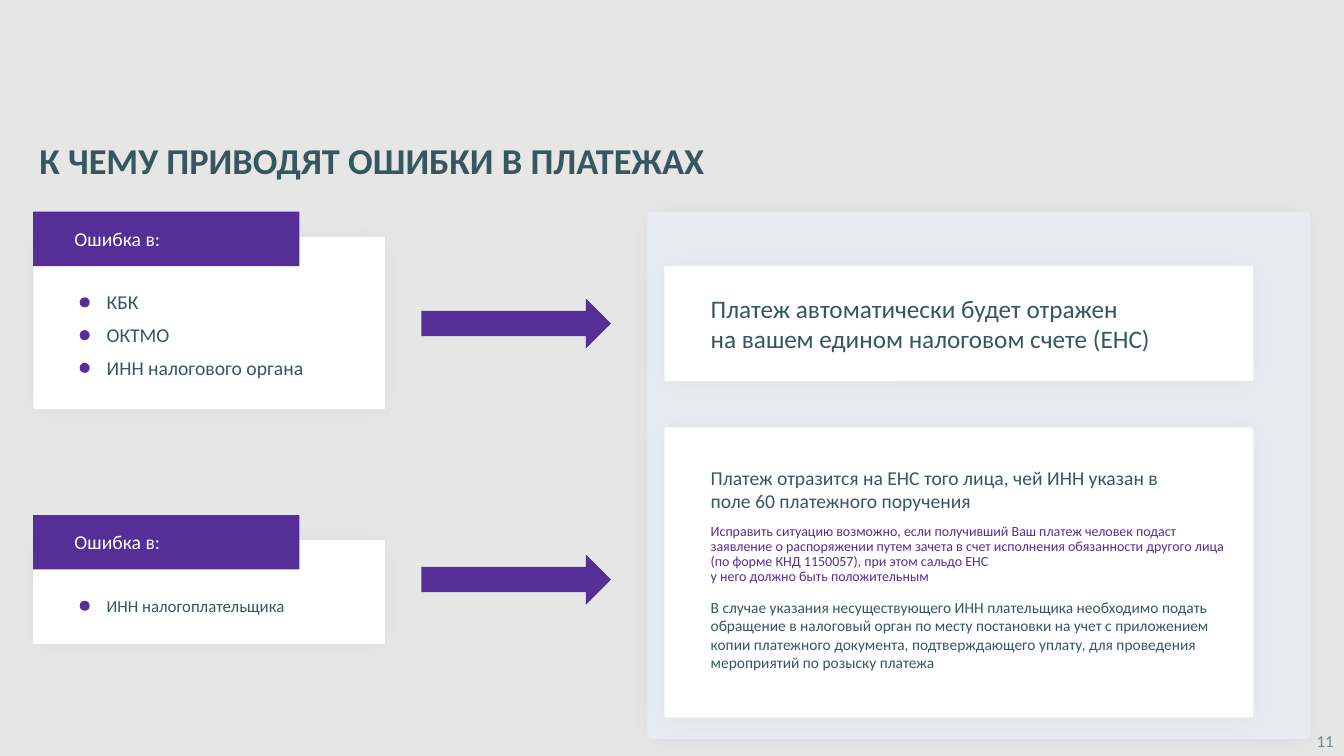
from copy import deepcopy
from dataclasses import dataclass

from lxml.etree import SubElement
from pptx import Presentation
from pptx.dml.color import RGBColor
from pptx.enum.shapes import MSO_SHAPE as Preset
from pptx.enum.text import MSO_ANCHOR as Anchor, MSO_AUTO_SIZE as AutoSize, PP_ALIGN as Align
from pptx.oxml.ns import qn
from pptx.shapes.autoshape import Shape
from pptx.slide import Slide
from pptx.util import Inches, Pt


@dataclass(frozen=True)
class Theme:
    font: str = "Calibri"
    background: str = "E7E6E6"
    panel: str = "E8EBF2"
    card: str = "FFFFFF"
    accent: str = "562E98"
    ink: str = "365760"
    title: int = 26
    lead: int = 18
    body: int = 14
    small: int = 12
    note: int = 11
    hint: int = 10


THEME = Theme()


@dataclass(frozen=True)
class Box:
    left: float
    top: float
    width: float
    height: float

    def emu(self) -> tuple:
        return tuple(Inches(v) for v in (self.left, self.top, self.width, self.height))


@dataclass(frozen=True)
class ErrorCause:
    top: float
    card_height: float
    items: tuple[str, ...]
    items_top: float
    item_height: float
    size: int
    arrow_top: float


@dataclass(frozen=True)
class Passage:
    box: Box
    text: str
    size: int
    color: str = THEME.ink
    spacing: float = 1.0


CAUSES = (
    ErrorCause(2.1, 1.71, ("КБК", "ОКТМО", "ИНН налогового органа"), 2.83, 0.34, THEME.body, 2.96),
    ErrorCause(5.11, 1.03, ("ИНН налогоплательщика",), 5.86, 0.3, THEME.small, 5.5),
)
OUTCOME_CARDS = (Box(6.59, 2.64, 5.84, 1.14), Box(6.59, 4.24, 5.84, 2.88))
PASSAGES = (
    Passage(Box(6.95, 2.86, 5.4, 0.71),
            "Платеж автоматически будет отражен\nна вашем едином налоговом счете (ЕНС)", THEME.lead),
    Passage(Box(6.95, 4.57, 4.98, 0.57),
            "Платеж отразится на ЕНС того лица, чей ИНН указан в поле 60 платежного поручения",
            THEME.body),
    Passage(Box(6.95, 5.15, 5.38, 0.71),
            "Исправить ситуацию возможно, если получивший Ваш платеж человек подаст заявление "
            "о распоряжении путем зачета в счет исполнения обязанности другого лица "
            "(по форме КНД 1150057), при этом сальдо ЕНС \nу него должно быть положительным",
            THEME.hint, THEME.accent, 0.9),
    Passage(Box(6.95, 5.88, 5.38, 1.03),
            "В случае указания несуществующего ИНН плательщика необходимо подать обращение "
            "в налоговый орган по месту постановки на учет с приложением копии платежного "
            "документа, подтверждающего уплату, для проведения мероприятий по розыску платежа",
            THEME.note),
)
ITEM_STEP = 0.325
DOT = 0.1


def write(shape: Shape, text: str, *, size: int, color: str = THEME.ink, bold: bool = False,
          wrap: bool = True, spacing: float = 1.0, alpha: int = 100) -> None:
    frame = shape.text_frame
    frame.word_wrap = wrap
    frame.auto_size = AutoSize.NONE
    frame.vertical_anchor = Anchor.TOP
    paragraph = frame.paragraphs[0]
    paragraph.text = text
    paragraph.alignment = Align.LEFT
    paragraph.line_spacing = spacing
    for run in paragraph.runs:
        run.font.name = THEME.font
        run.font.size = Pt(size)
        run.font.bold = bold
        run.font.color.rgb = RGBColor.from_string(color)
    properties = paragraph.runs[0].font._element
    if alpha < 100:
        SubElement(properties.find(".//" + qn("a:srgbClr")), qn("a:alpha"), val=str(alpha * 1000))
    # Line breaks take the same size as the words around them
    for line_break in paragraph._p.findall(qn("a:br")):
        line_break.insert(0, deepcopy(properties))


def add_text(slide: Slide, box: Box, text: str, **style) -> None:
    write(slide.shapes.add_textbox(*box.emu()), text, **style)


def add_block(slide: Slide, preset: Preset, box: Box, color: str) -> Shape:
    block = slide.shapes.add_shape(preset, *box.emu())
    block.shadow.inherit = False
    block.fill.solid()
    block.fill.fore_color.rgb = RGBColor.from_string(color)
    block.line.fill.background()
    return block


def add_card(slide: Slide, box: Box, color: str = THEME.card) -> None:
    card = add_block(slide, Preset.ROUNDED_RECTANGLE, box, color)
    card.adjustments[0] = 0.009
    effects = card._element.spPr.find(qn("a:effectLst"))
    shadow = SubElement(effects, qn("a:outerShdw"), blurRad=str(Pt(20)), dist=str(Pt(1)),
                        dir="6000000", algn="ctr", rotWithShape="0")
    black = SubElement(shadow, qn("a:srgbClr"), val="000000")
    SubElement(black, qn("a:alpha"), val="4000")


def add_cause(slide: Slide, cause: ErrorCause) -> None:
    # Card with its header strip
    add_card(slide, Box(0.33, cause.top + 0.25, 3.49, cause.card_height))
    add_block(slide, Preset.RECTANGLE, Box(0.33, cause.top, 2.64, 0.54), THEME.accent)
    add_text(slide, Box(0.64, cause.top + 0.1, 1.18, 0.34), "Ошибка в:",
             size=THEME.body, color=THEME.card, wrap=False)
    # Dotted items
    for index, item in enumerate(cause.items):
        top = cause.items_top + index * ITEM_STEP
        dot_top = top + (cause.item_height - DOT) / 2
        add_text(slide, Box(0.96, top, 2.52, cause.item_height), item, size=cause.size)
        add_block(slide, Preset.OVAL, Box(0.79, dot_top, DOT, DOT), THEME.accent)
    # Arrow to the outcome
    add_block(slide, Preset.RIGHT_ARROW, Box(4.18, cause.arrow_top, 1.88, 0.5), THEME.accent)


def main() -> None:
    deck = Presentation()
    deck.slide_width, deck.slide_height = Inches(13.33), Inches(7.5)
    slide = deck.slides.add_slide(deck.slide_layouts[5])
    slide.background.fill.solid()
    slide.background.fill.fore_color.rgb = RGBColor.from_string(THEME.background)

    # Title
    title = slide.shapes.title
    title.left, title.top, title.width, title.height = Box(0.29, 1.37, 9.28, 0.49).emu()
    write(title, "К ЧЕМУ ПРИВОДЯТ ОШИБКИ В ПЛАТЕЖАХ", size=THEME.title, bold=True, spacing=0.9)

    # Outcomes
    add_card(slide, Box(6.42, 2.1, 6.58, 5.23), THEME.panel)
    for box in OUTCOME_CARDS:
        add_card(slide, box)
    for passage in PASSAGES:
        add_text(slide, passage.box, passage.text, size=passage.size,
                 color=passage.color, spacing=passage.spacing)

    # Causes
    for cause in CAUSES:
        add_cause(slide, cause)

    # Page number
    add_text(slide, Box(12.96, 7.2, 0.38, 0.3), "11", size=THEME.small, wrap=False, alpha=65)
    deck.save("out.pptx")


if __name__ == "__main__":
    main()
